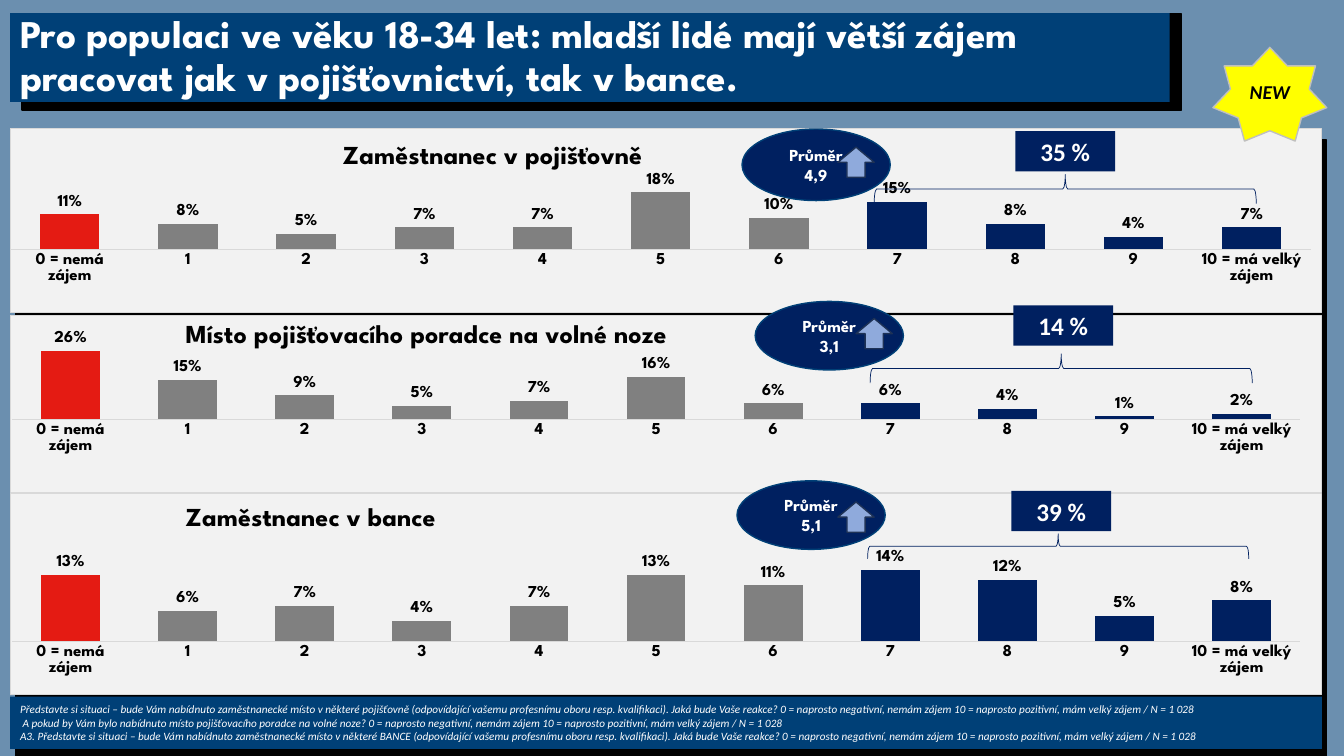
"""Build the slide on interest in insurance and bank jobs among people aged 18-34."""
from lxml import etree
from pptx import Presentation
from pptx import util as u
from pptx.chart import data
from pptx.dml.color import RGBColor
from pptx.enum import chart as ch, shapes, text
from pptx.oxml import ns

BLUE = RGBColor(0x00, 0x40, 0x77)
NAVY = RGBColor(0x00, 0x20, 0x60)
SKY = RGBColor(0x8F, 0xAA, 0xDC)
EDGE = RGBColor(0x1E, 0x32, 0x56)
BACK = RGBColor(0x6B, 0x8F, 0xAF)
RED = RGBColor(0xE4, 0x1B, 0x13)
GRAY = RGBColor(0x80, 0x80, 0x80)
PALE = RGBColor(0xF2, 0xF2, 0xF2)
RULE = RGBColor(0xD9, 0xD9, 0xD9)
RIM = RGBColor(0xBF, 0xBF, 0xBF)
GOLD = RGBColor(0xFF, 0xFF, 0x00)
BLACK = RGBColor(0, 0, 0)
WHITE = RGBColor(255, 255, 255)

SPART, CALI = "League Spartan", "Calibri"
HEAD = dict(name=SPART, size=u.Pt(28), bold=True, color=WHITE)
MEAN = dict(name=SPART, size=u.Pt(12), bold=True, color=WHITE)
SHARE = dict(name=CALI, size=u.Pt(18), bold=True, color=WHITE)
NOTE = dict(name=CALI, size=u.Pt(8), italic=True, color=WHITE)
BADGE = dict(name=CALI, size=u.Pt(14), bold=True, italic=True, color=BLACK)
BASE = dict(name=SPART, size=u.Pt(10), bold=True, color=BLACK)
TICK = dict(BASE, size=u.Pt(12))
TOP = dict(BASE, size=u.Pt(18.6))

KIND = shapes.MSO_SHAPE
MID, LEFT = text.PP_ALIGN.CENTER, text.PP_ALIGN.LEFT
CATS = ["0 = nemá zájem", *map(str, range(1, 10)), "10 = má velký zájem"]

ROWS = [
    dict(name="Zaměstnanec v pojišťovně", box=(0.1, 1.27, 13.01, 1.84),
         plot=(0, 0.311, 0.992, 0.345), spot=(0.25, 0.05), peak=0.2,
         vals=(11, 8, 5, 7, 7, 18, 10, 15, 8, 4, 7),
         oval=(7.36, 1.28, 1.47, 0.71), mean="4,9", arrow=(8.31, 1.46),
         tag=(10.07, 1.3), share="35 %", brace=(10.42, -0.02, 0.29, 3.79)),
    dict(name="Místo pojišťovacího poradce na volné noze",
         box=(0.1, 3.12, 13.01, 1.77),
         plot=(0.001, 0.143, 0.983, 0.444), spot=(0.13, 0.01), peak=0.3,
         vals=(26, 15, 9, 5, 7, 16, 6, 6, 4, 1, 2),
         oval=(7.49, 2.99, 1.47, 0.68), mean="3,1", arrow=(8.49, 3.16),
         tag=(10.05, 3.03), share="14 %", brace=(10.38, 1.76, 0.29, 3.79)),
    dict(name="Zaměstnanec v bance", box=(0.1, 4.89, 13.01, 2.01),
         plot=(0.001, 0.329, 0.983, 0.405), spot=(0.13, 0.03), peak=0.16,
         vals=(13, 6, 7, 4, 7, 13, 11, 14, 12, 5, 8),
         oval=(7.31, 4.77, 1.47, 0.68), mean="5,1", arrow=(8.31, 4.98),
         tag=(10.03, 4.87), share="39 %", brace=(10.37, 3.53, 0.25, 3.78)),
]

REPLY = ("Jaká bude Vaše reakce? 0 = naprosto negativní, nemám zájem "
         "10 = naprosto pozitivní, mám velký zájem / N = 1 028")
FIELD = "(odpovídající vašemu profesnímu oboru resp. kvalifikaci)."
OFFER = "Představte si situaci – bude Vám nabídnuto zaměstnanecké místo v některé"
NOTES = [
    f"{OFFER} pojišťovně {FIELD} {REPLY}",
    " A pokud by Vám bylo nabídnuto místo pojišťovacího poradce na volné noze? "
    + REPLY.partition("? ")[2],
    f"A3. {OFFER} BANCE {FIELD} {REPLY}",
]


class Deck:
    """Hold the style and the current slide, and draw each kind of element."""

    def __init__(self):
        self.show = Presentation()
        self.show.slide_width, self.show.slide_height = u.Inches(13.33), u.Inches(7.5)
        self.slide = self.show.slides.add_slide(self.show.slide_layouts[5])
        self.paint(self.slide.background.fill, BACK)

    def paint(self, fill, hue):
        fill.solid()
        fill.fore_color.rgb = hue

    def style(self, font, form):
        for key, val in form.items():
            if key == "color":
                font.color.rgb = val
            else:
                setattr(font, key, val)

    def label(self, shape, lines, form, align):
        frame = shape.text_frame
        frame.word_wrap = True
        frame.vertical_anchor = text.MSO_ANCHOR.MIDDLE
        frame.text = "\n".join(lines)
        for para in frame.paragraphs:
            para.alignment = align
            self.style(para.font, form)

    def shape(self, kind, box, fill=None, line=None, width=1, turn=0,
              lines=(), form=None, align=MID):
        item = self.slide.shapes.add_shape(kind, *map(u.Inches, box))
        item.shadow.inherit = False
        item.rotation = turn
        if fill is None:
            item.fill.background()
        else:
            self.paint(item.fill, fill)
        if line is None:
            item.line.fill.background()
        else:
            item.line.color.rgb = line
            item.line.width = u.Pt(width)
        if lines:
            self.label(item, lines, form, align)
        return item

    def title(self, words, box):
        item = self.slide.shapes.title
        item.left, item.top, item.width, item.height = map(u.Inches, box)
        item.element.getparent().append(item.element)
        self.paint(item.fill, BLUE)
        self.label(item, [words], HEAD, LEFT)
        item.text_frame.auto_size = text.MSO_AUTO_SIZE.NONE
        item.text_frame.paragraphs[0].line_spacing = 0.9

    def layout(self, host, place, vals, inner=False):
        for old in host.findall(ns.qn("c:layout")):
            host.remove(old)
        node = etree.Element(ns.qn("c:layout"))
        man = etree.SubElement(node, ns.qn("c:manualLayout"))
        parts = [("layoutTarget", "inner")] if inner else []
        parts += [("xMode", "edge"), ("yMode", "edge"), *zip("xywh", vals)]
        for tag, val in parts:
            etree.SubElement(man, ns.qn("c:" + tag)).set("val", str(val))
        host.insert(place, node)

    def panel(self, chart):
        props = etree.Element(ns.qn("c:spPr"))
        line = etree.Element(ns.qn("a:ln"), w=str(u.Pt(0.75)))
        for host, hue in ((props, PALE), (line, RULE)):
            fill = etree.SubElement(host, ns.qn("a:solidFill"))
            etree.SubElement(fill, ns.qn("a:srgbClr")).set("val", str(hue))
        props.append(line)
        chart.element.find(ns.qn("c:chart")).addnext(props)

    def chart(self, row):
        info = data.CategoryChartData(number_format="###0%")
        info.categories = CATS
        info.add_series("Series 1", [val / 100 for val in row["vals"]])
        chart = self.slide.shapes.add_chart(
            ch.XL_CHART_TYPE.COLUMN_CLUSTERED, *map(u.Inches, row["box"]), info).chart
        self.style(chart.font, BASE)
        chart.has_legend = False
        head = chart.chart_title
        head.text_frame.text = row["name"]
        self.style(head.text_frame.paragraphs[0].font, TOP)
        self.layout(head.element, 1, row["spot"])
        self.layout(chart.element.find(".//" + ns.qn("c:plotArea")), 0, row["plot"], True)
        self.panel(chart)
        cat, val = chart.category_axis, chart.value_axis
        cat.major_tick_mark = ch.XL_TICK_MARK.NONE
        cat.format.line.color.rgb = RULE
        cat.format.line.width = u.Pt(0.75)
        self.style(cat.tick_labels.font, TICK)
        val.visible = val.has_major_gridlines = False
        val.minimum_scale, val.maximum_scale = 0, row["peak"]
        plot = chart.plots[0]
        plot.gap_width = 99
        plot.vary_by_categories = False
        bars = plot.series[0]
        self.paint(bars.format.fill, GRAY)
        for spot, hue in {0: RED, **dict.fromkeys(range(7, 11), NAVY)}.items():
            self.paint(bars.points[spot].format.fill, hue)
        tags = bars.data_labels
        tags.show_value = True
        tags.number_format, tags.number_format_is_linked = "###0%", False
        tags.position = ch.XL_LABEL_POSITION.OUTSIDE_END
        self.style(tags.font, TICK)

    def callout(self, row):
        tag = self.shape(KIND.RECTANGLE, (*row["tag"], 0.99, 0.4), NAVY,
                         lines=[row["share"]], form=SHARE)
        tag.text_frame.auto_size = text.MSO_AUTO_SIZE.SHAPE_TO_FIT_TEXT
        self.shape(KIND.RIGHT_BRACE, row["brace"], line=NAVY, width=0.5, turn=270)
        self.shape(KIND.OVAL, row["oval"], NAVY, BLUE,
                   lines=["Průměr", row["mean"]], form=MEAN)
        self.shape(KIND.DOWN_ARROW, (*row["arrow"], 0.36, 0.3), SKY, EDGE, turn=180)


def main():
    deck = Deck()
    for box in ((0.16, 6.9, 13, 0.6), (0.16, 1.39, 13, 5.65), (0.22, 0.14, 11.5, 0.95)):
        deck.shape(KIND.RECTANGLE, box, BLACK, BLACK)
    for row in ROWS:
        deck.chart(row)
    deck.title("Pro populaci ve věku 18-34 let: mladší lidé mají větší zájem "
               "pracovat jak v pojišťovnictví, tak v bance.", (0.1, 0.13, 11.5, 0.88))
    deck.shape(KIND.RECTANGLE, (0.1, 6.91, 13.01, 0.52), BLUE,
               lines=NOTES, form=NOTE, align=LEFT)
    for row in ROWS:
        deck.callout(row)
    deck.shape(KIND.STAR_7_POINT, (12.03, 0.47, 1.13, 0.93), GOLD, RIM,
               lines=["NEW"], form=BADGE)
    deck.show.save("out.pptx")


if __name__ == "__main__":
    main()
